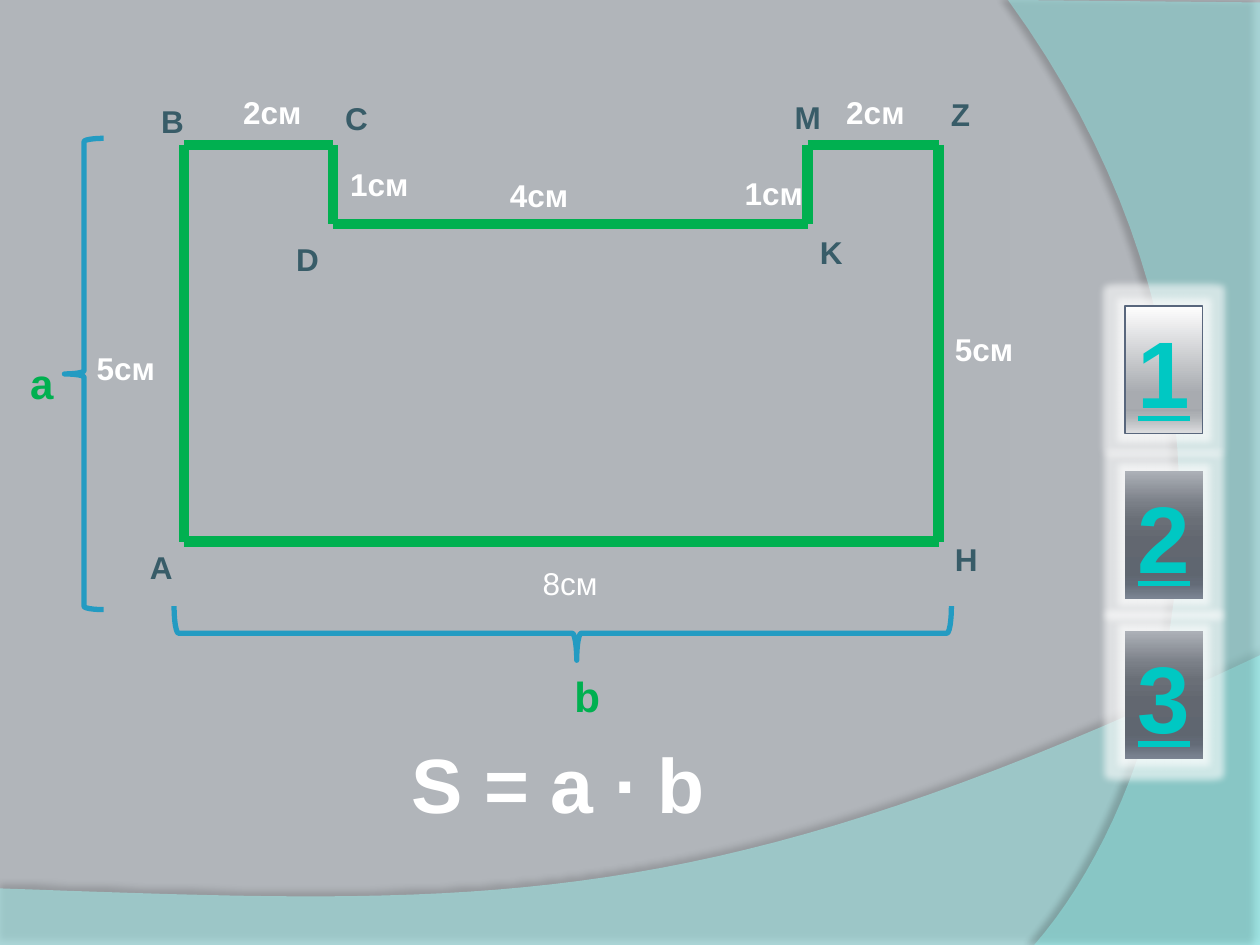
from itertools import pairwise

from lxml.etree import SubElement
from pptx import Presentation
from pptx.dml.color import RGBColor
from pptx.enum.shapes import MSO_CONNECTOR, MSO_SHAPE
from pptx.enum.text import MSO_ANCHOR, MSO_AUTO_SIZE, PP_ALIGN
from pptx.oxml.ns import qn
from pptx.util import Cm, Pt

COLORS = {
    "background": "B1B5BA", "bottom_wave": "A6FFFC", "right_wave": "96FFFB",
    "outline": "00B050", "vertex": "385C68", "white": "FFFFFF",
    "brace": "239BC2", "digit": "00C8C3", "button_edge": "59677D", "black": "000000",
}
LIGHT_STOPS = [(0, "FEFEFE"), (68, "A8ABB0"), (81, "A5A8AD"), (86, "AEB1B5"), (100, "DDDEE0")]
DARK_STOPS = [(0, "ACB0B7"), (25, "7A7F87"), (38, "6A6F77"), (55, "626770"),
              (80, "5F6670"), (88, "636B77"), (100, "7B8492")]

# Corners of the figure in drawing order, in cm
CORNERS = {
    "A": (3.71, 10.92), "B": (3.71, 2.92), "C": (6.71, 2.92), "D": (6.71, 4.52),
    "K": (16.28, 4.52), "M": (16.28, 2.92), "Z": (18.92, 2.92), "H": (18.92, 10.92),
}
# Text, left, top, width in cm
VERTEX_LABELS = [
    ("A", 2.77, 10.92, 0.97), ("B", 3, 1.93, 0.97), ("C", 6.71, 1.88, 0.99),
    ("D", 5.72, 4.72, 0.97), ("K", 16.28, 4.57, 0.97), ("M", 15.77, 1.85, 1.04),
    ("Z", 18.92, 1.8, 0.97), ("H", 19, 10.77, 0.97),
]
SIDE_LENGTHS = [
    ("2см", 4.65, 1.75, 1.7), ("1см", 6.81, 3.2, 2.11), ("4см", 10.03, 3.43, 2.06),
    ("1см", 14.76, 3.38, 1.98), ("2см", 16.81, 1.75, 1.7), ("5см", 19, 6.53, 2.11),
    ("8см", 10.69, 11.25, 2.59), ("5см", 1.7, 6.91, 1.8),
]


def rgb(name):
    return RGBColor.from_string(COLORS[name])


def add_color(parent, value, alpha=100):
    color = SubElement(parent, qn("a:srgbClr"), val=value)
    if alpha < 100:
        SubElement(color, qn("a:alpha"), val=str(alpha * 1000))


def add_effect(shape, tag, color, alpha, **settings):
    shape.shadow.inherit = False
    effects = shape._element.spPr.find(qn("a:effectLst"))
    add_color(SubElement(effects, qn(tag), **settings), COLORS[color], alpha)


def bezier(start, first, second, end, steps=40):
    for step in range(steps + 1):
        t = step / steps
        weights = ((1 - t) ** 3, 3 * t * (1 - t) ** 2, 3 * t * t * (1 - t), t ** 3)
        yield tuple(sum(w * p[axis] for w, p in zip(weights, (start, first, second, end)))
                    for axis in (0, 1))


def add_wave(slide, edges, curve, color, alpha, shadow_alpha, distance, direction):
    points = [(Cm(x), Cm(y)) for x, y in [*edges, *bezier(*curve)]]
    builder = slide.shapes.build_freeform(*points[0])
    builder.add_line_segments(points[1:])
    wave = builder.convert_to_shape()
    wave.fill.solid()
    wave.fill.fore_color.rgb = rgb(color)
    fill_color = wave._element.spPr.find(qn("a:solidFill"))[0]
    SubElement(fill_color, qn("a:alpha"), val=str(alpha * 1000))
    wave.line.fill.background()
    add_effect(wave, "a:outerShdw", "black", shadow_alpha, blurRad=str(Pt(4)),
               dist=str(Pt(distance)), dir=str(direction * 60000))


def add_side(slide, start, end):
    side = slide.shapes.add_connector(MSO_CONNECTOR.STRAIGHT, *map(Cm, (*start, *end)))
    side.line.color.rgb = rgb("outline")
    side.line.width = Pt(6)
    SubElement(side._element.spPr, qn("a:effectLst"))


def write(frame, text, size, color, bold=True, underline=None):
    run = frame.paragraphs[0].add_run()
    run.text = text
    font = run.font
    font.name, font.size, font.bold, font.underline = "Arial", Pt(size), bold, underline
    font.color.rgb = rgb(color)


def add_label(slide, text, left, top, width, color, size=18, height=1.02, bold=True, wrap=False):
    frame = slide.shapes.add_textbox(Cm(left), Cm(top), Cm(width), Cm(height)).text_frame
    frame.word_wrap = wrap
    frame.auto_size = MSO_AUTO_SIZE.SHAPE_TO_FIT_TEXT
    write(frame, text, size, color, bold)


def add_brace(slide, left, top, width, height, rotation=0, adjustments=()):
    brace = slide.shapes.add_shape(MSO_SHAPE.LEFT_BRACE, Cm(left), Cm(top), Cm(width), Cm(height))
    brace.rotation = rotation
    for index, value in enumerate(adjustments):
        brace.adjustments[index] = value
    brace.fill.background()
    brace.line.color.rgb = rgb("brace")
    brace.line.width = Pt(3)
    brace.shadow.inherit = False


def add_button(slide, digit, top, stops, edge=None):
    button = slide.shapes.add_shape(MSO_SHAPE.RECTANGLE, Cm(22.68), Cm(top), Cm(1.57), Cm(2.57))
    button.fill.gradient()
    button.fill.gradient_angle = 270
    stop_list = button._element.spPr.find(qn("a:gradFill")).find(qn("a:gsLst"))
    for old_stop in list(stop_list):
        stop_list.remove(old_stop)
    for position, color in stops:
        add_color(SubElement(stop_list, qn("a:gs"), pos=str(position * 1000)), color)
    if edge:
        button.line.color.rgb = rgb(edge)
        button.line.width = Pt(0.75)
    else:
        button.line.fill.background()
    add_effect(button, "a:glow", "white", 60, rad=str(Pt(8)))
    frame = button.text_frame
    frame.word_wrap = False
    frame.auto_size = MSO_AUTO_SIZE.SHAPE_TO_FIT_TEXT
    frame.vertical_anchor = MSO_ANCHOR.BOTTOM
    frame.paragraphs[0].alignment = PP_ALIGN.CENTER
    write(frame, digit, 54, "digit", underline=True)


def main():
    deck = Presentation()
    deck.slide_width, deck.slide_height = Cm(25.4), Cm(19.05)
    slide = deck.slides.add_slide(deck.slide_layouts[6])
    slide.background.fill.solid()
    slide.background.fill.fore_color.rgb = rgb("background")

    # Background waves
    add_wave(slide, [(0, 17.91), (0, 19.05), (25.4, 19.05)],
             [(25.4, 13.21), (14.2, 18.52), (9.93, 18.26), (0, 17.91)],
             "bottom_wave", 45, 35, 3.5, 270)
    add_wave(slide, [(25.4, 0.05), (25.4, 19.05)],
             [(20.85, 19.05), (23.75, 15.72), (25.86, 7.62), (20.32, 0)],
             "right_wave", 40, 45, 4, 180)

    # Figure with its corners and side lengths
    for start, end in pairwise([*CORNERS.values(), CORNERS["A"]]):
        add_side(slide, start, end)
    for label in VERTEX_LABELS:
        add_label(slide, *label, "vertex")
    for label in SIDE_LENGTHS:
        add_label(slide, *label, "white", bold=label[0] != "8см", wrap=label[3] > 1.75)

    # Formula and the two dimensions it uses
    add_label(slide, "S = a ∙ b", 8.05, 14.73, 6.48, "white", size=44, height=2.13)
    add_brace(slide, 1.3, 2.79, 0.79, 9.5)
    add_brace(slide, 10.8, 4.93, 1.09, 15.67, 270, (0.083, 0.518))
    add_label(slide, "a", 0.56, 7.09, 0.3, "outline", size=24, height=1.27, wrap=True)
    add_label(slide, "b", 11.33, 13.39, 1.04, "outline", size=24, height=1.27)

    # Numbered buttons
    add_button(slide, "1", 6.17, LIGHT_STOPS, "button_edge")
    add_button(slide, "2", 9.5, DARK_STOPS)
    add_button(slide, "3", 12.73, DARK_STOPS)

    deck.save("out.pptx")


if __name__ == "__main__":
    main()
